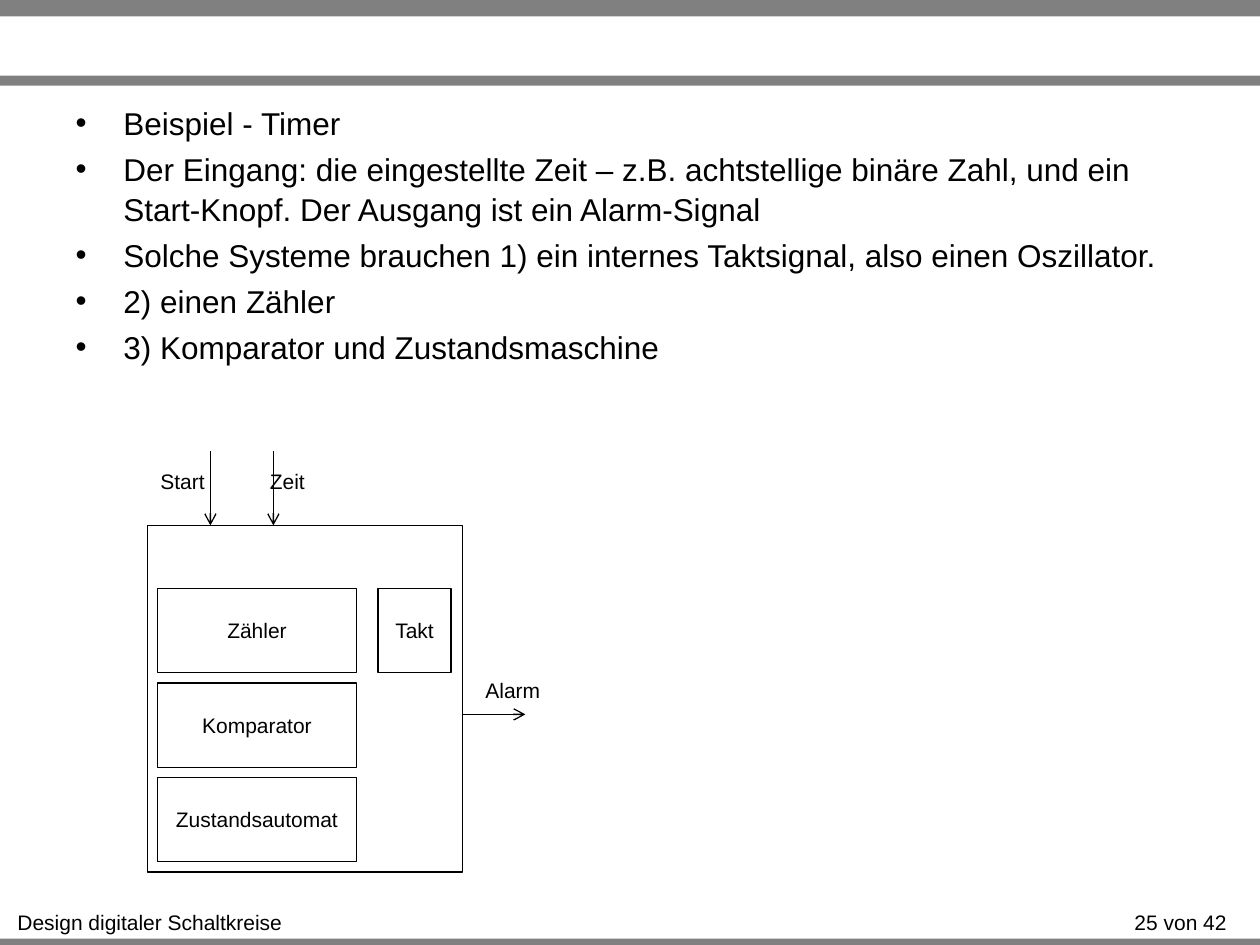
import pptx
import pptx.util
import pptx.dml.color
import pptx.enum.shapes
import pptx.enum.text
import pptx.oxml
import pptx.oxml.ns
import lxml.etree

Inches = pptx.util.Inches
Pt = pptx.util.Pt
qn = pptx.oxml.ns.qn


def color(hex_code):
    return pptx.dml.color.RGBColor.from_string(hex_code)


def write(paragraph, text, size):
    run = paragraph.add_run()
    run.text = text
    run.font.size = Pt(size)
    run.font.name = "Arial"
    run.font.color.rgb = color("000000")


deck = pptx.Presentation()
deck.slide_width = Inches(10)
deck.slide_height = Inches(7.5)
slide = deck.slides.add_slide(deck.slide_layouts[1])
title = slide.shapes.title
title.element.getparent().remove(title.element)

for top, height in [(7.45, 0.08), (0, 0.13), (0.6, 0.08)]:
    band = slide.shapes.add_shape(
        pptx.enum.shapes.MSO_SHAPE.RECTANGLE,
        Inches(0), Inches(top), Inches(10), Inches(height))
    band.shadow.inherit = False
    band.fill.solid()
    band.fill.fore_color.rgb = color("808080")
    band.line.fill.background()

points = slide.placeholders[1]
points.left, points.top = Inches(0.5), Inches(0.76)
points.width, points.height = Inches(9), Inches(3.58)
points.text_frame.auto_size = pptx.enum.text.MSO_AUTO_SIZE.NONE
for index, point in enumerate([
    "Beispiel - Timer",
    "Der Eingang: die eingestellte Zeit – z.B. achtstellige binäre Zahl, und ein "
    "Start-Knopf. Der Ausgang ist ein Alarm-Signal",
    "Solche Systeme brauchen 1) ein internes Taktsignal, also einen Oszillator.",
    "2) einen Zähler",
    "3) Komparator und Zustandsmaschine",
]):
    paragraph = points.text_frame.paragraphs[0] if index == 0 else points.text_frame.add_paragraph()
    properties = paragraph._p.get_or_add_pPr()
    properties.set("marL", str(Inches(0.38)))
    properties.set("indent", str(-Inches(0.38)))
    lxml.etree.SubElement(properties, qn("a:buFont")).set("typeface", "Arial")
    lxml.etree.SubElement(properties, qn("a:buChar")).set("char", "•")
    paragraph.line_spacing = 1.05
    paragraph.space_before = Pt(3.6 if index else 0)
    write(paragraph, point, 18)

for block, left, top, width, height in [
    ("", 1.17, 4.17, 2.5, 2.75),
    ("Zähler", 1.25, 4.67, 1.58, 0.67),
    ("Komparator", 1.25, 5.42, 1.58, 0.67),
    ("Zustandsautomat", 1.25, 6.17, 1.58, 0.67),
    ("Takt", 3, 4.67, 0.58, 0.67),
]:
    box = slide.shapes.add_shape(
        pptx.enum.shapes.MSO_SHAPE.RECTANGLE,
        Inches(left), Inches(top), Inches(width), Inches(height))
    box.shadow.inherit = False
    box.fill.background()
    box.line.color.rgb = color("000000")
    box.line.width = Pt(0.75)
    if block:
        box.text_frame.word_wrap = False
        box.text_frame.vertical_anchor = pptx.enum.text.MSO_ANCHOR.MIDDLE
        box.text_frame.paragraphs[0].alignment = pptx.enum.text.PP_ALIGN.CENTER
        write(box.text_frame.paragraphs[0], block, 12)

for start_x, start_y, end_x, end_y in [
    (1.67, 3.58, 1.67, 4.17),
    (2.17, 3.58, 2.17, 4.17),
    (3.67, 5.67, 4.17, 5.67),
]:
    signal = slide.shapes.add_connector(
        pptx.enum.shapes.MSO_CONNECTOR.STRAIGHT,
        Inches(start_x), Inches(start_y), Inches(end_x), Inches(end_y))
    signal.line.color.rgb = color("000000")
    signal.line.width = Pt(0.75)
    lxml.etree.SubElement(signal.line._get_or_add_ln(), qn("a:tailEnd")).set("type", "arrow")
    lxml.etree.SubElement(signal.element.spPr, qn("a:effectLst"))

for label, left, top, width in [
    ("Start", 1.17, 3.67, 0.56),
    ("Zeit", 2.04, 3.67, 0.48),
    ("Alarm", 3.75, 5.33, 0.64),
    ("Design digitaler Schaltkreise", 0.03, 7.17, 2.32),
    ("25 von 42", 8.83, 7.17, 1.08),
]:
    caption = slide.shapes.add_textbox(Inches(left), Inches(top), Inches(width), Inches(0.3))
    caption.text_frame.word_wrap = False
    caption.text_frame.auto_size = pptx.enum.text.MSO_AUTO_SIZE.SHAPE_TO_FIT_TEXT
    caption.text_frame.paragraphs[0].alignment = pptx.enum.text.PP_ALIGN.CENTER
    write(caption.text_frame.paragraphs[0], label, 12)

deck.save("out.pptx")
